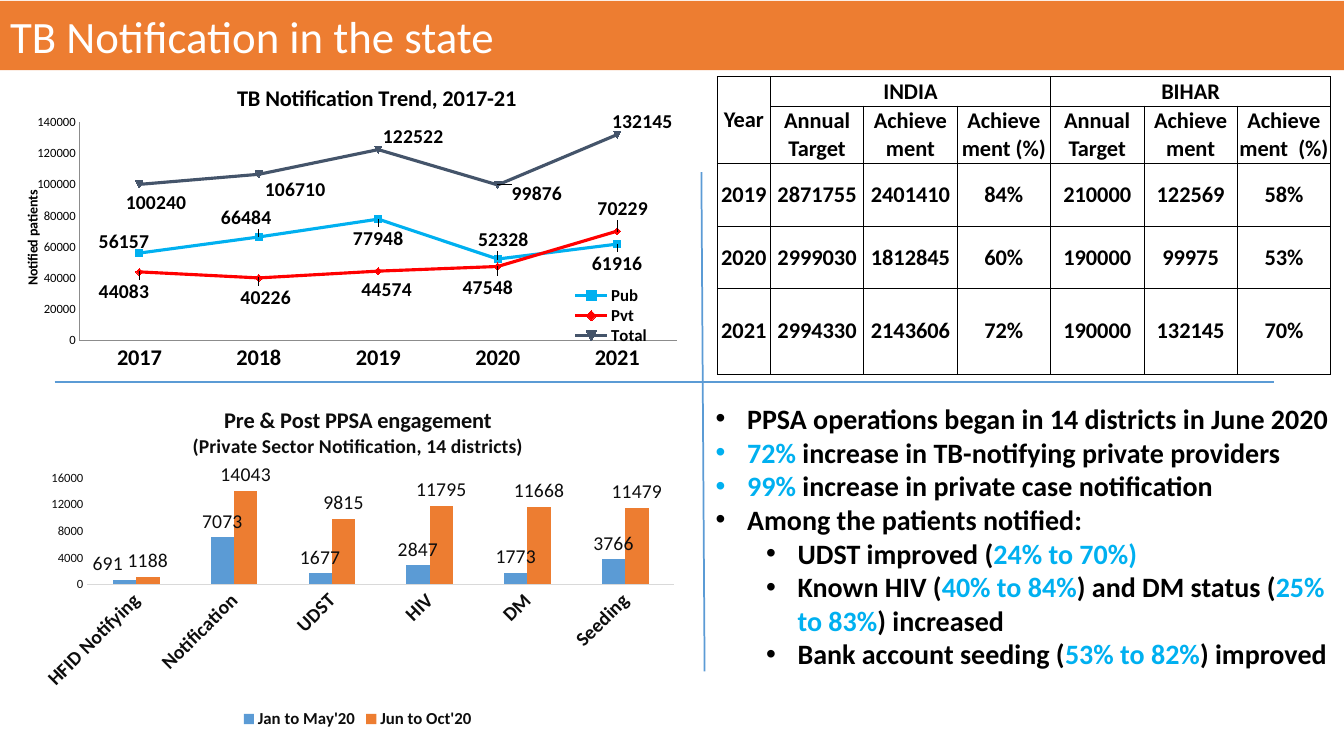
from lxml.etree import SubElement
from pptx import Presentation
from pptx.chart.data import CategoryChartData
from pptx.dml.color import RGBColor
from pptx.enum.chart import XL_CHART_TYPE, XL_LABEL_POSITION, XL_LEGEND_POSITION, XL_MARKER_STYLE, XL_TICK_MARK
from pptx.enum.shapes import MSO_CONNECTOR
from pptx.enum.text import MSO_ANCHOR, MSO_AUTO_SIZE, PP_ALIGN
from pptx.oxml import parse_xml
from pptx.oxml.ns import nsdecls, qn
from pptx.util import Pt

ORANGE = RGBColor(0xED, 0x7D, 0x31)
BLUE = RGBColor(0x5B, 0x9B, 0xD5)
CYAN = RGBColor(0x00, 0xB0, 0xF0)
RED = RGBColor(0xFF, 0x00, 0x00)
SLATE = RGBColor(0x44, 0x54, 0x6A)
BLACK = RGBColor(0x00, 0x00, 0x00)
INK = RGBColor(0x0D, 0x0D, 0x0D)
GREY = RGBColor(0x8C, 0x8C, 0x8C)
PALE = RGBColor(0xD9, 0xD9, 0xD9)
WHITE = RGBColor(0xFF, 0xFF, 0xFF)
FONT = "Calibri"

# Content
TITLE = "TB Notification in the state"
# (level, runs); every second run is highlighted
BULLETS = [
    (0, ["PPSA operations began in 14 districts in June 2020"]),
    (0, ["", "72% ", "increase in TB-notifying private providers"]),
    (0, ["", "99% ", "increase in private case notification"]),
    (0, ["Among the patients notified:"]),
    (1, ["UDST improved (", "24% to 70%)"]),
    (1, ["Known HIV (", "40% to 84%", ") and DM status (", "25% to 83%", ") increased"]),
    (1, ["Bank account seeding (", "53% to 82%", ") improved"]),
]
# \v breaks the line inside a cell
TABLE = [
    ["Year", "INDIA", "", "", "BIHAR", "", ""],
    ["", "Annual Target", "Achieve\vment", "Achieve\vment (%)",
     "Annual Target", "Achieve\vment", "Achieve\vment  (%)"],
    ["2019", "2871755", "2401410", "84%", "210000", "122569", "58%"],
    ["2020", "2999030", "1812845", "60%", "190000", "99975", "53%"],
    ["2021", "2994330", "2143606", "72%", "190000", "132145", "70%"],
]
MERGES = [((0, 0), (1, 0)), ((0, 1), (0, 3)), ((0, 4), (0, 6))]
COLUMN_WIDTHS = [38] + [66.7] * 6
ROW_HEIGHTS = [21, 41, 45, 44, 61.5]

# Series: name, colour, values, label shifts from each point (right, down)
TREND = {
    "box": (10, 50.4, 474, 226),
    "title": [("TB Notification Trend, 2017-21", 16)],
    "categories": ["2017", "2018", "2019", "2020", "2021"],
    "series": [
        ("Pub", CYAN, [56157, 66484, 77948, 52328, 61916],
         [(-11, -8), (-9, -14), (0, 14), (4, -14), (0, 14)]),
        ("Pvt", RED, [44083, 40226, 44574, 47548, 70229],
         [(-11, 14), (5, 14), (6, 13), (-7, 15), (4, -16)]),
        ("Total", SLATE, [100240, 106710, 122522, 99876, 132145],
         [(12, 13), (26, 11), (25, -9), (28, 6), (18, -9)]),
    ],
    "color": BLACK, "maximum": 140000, "step": 20000, "category_size": 16,
    "axis_line": (GREY, 0.5), "title_at": (0.33, 0.025),
    "plot_at": (0.099, 0.164, 0.9, 0.69),
}
ENGAGEMENT = {
    "box": (20, 278.6, 471, 245),
    "title": [("Pre & Post PPSA engagement", 16),
              ("(Private Sector Notification, 14 districts)", 14)],
    "categories": ["HFID Notifying", "Notification", "UDST", "HIV", "DM", "Seeding"],
    "series": [
        ("Jan to May'20", BLUE, [691, 7073, 1677, 2847, 1773, 3766], [(-12, 0)]),
        ("Jun to Oct'20", ORANGE, [1188, 14043, 9815, 11795, 11668, 11479], []),
    ],
    "color": INK, "maximum": 16000, "step": 4000, "category_size": 14,
    "axis_line": (PALE, 0.75), "title_at": (0.245, 0.035),
    "plot_at": (0.09, 0.257, 0.89, 0.31),
}
DIVIDERS = [((39, 273), (910, 273), 1.5), ((501, 123), (503.3, 479.5), 1.25)]
NO_LEADERS = (
    f'<c:extLst {nsdecls("c")}><c:ext uri="{{CE6537A1-D6FC-4f65-9D91-7224C49458BB}}" '
    'xmlns:c15="http://schemas.microsoft.com/office/drawing/2012/chart">'
    '<c15:showLeaderLines val="0"/></c:ext></c:extLst>')


def style_font(font, size, color, bold=True):
    font.name, font.size, font.bold = FONT, Pt(size), bold
    font.color.rgb = color


def place(shape, left, top, width, height):
    shape.left, shape.top = Pt(left), Pt(top)
    shape.width, shape.height = Pt(width), Pt(height)


def set_layout(element, index, values, mode="edge", inner=False):
    """Give a chart part its position as fractions of the chart."""
    for old in element.findall(qn("c:layout")):
        element.remove(old)
    layout = parse_xml(f"<c:layout {nsdecls('c')}><c:manualLayout/></c:layout>")
    manual = layout[0]
    if inner:
        SubElement(manual, qn("c:layoutTarget"), val="inner")
    for axis in "xy":
        SubElement(manual, qn(f"c:{axis}Mode"), val=mode)
    for name, value in zip("xywh", values):
        SubElement(manual, qn(f"c:{name}"), val=f"{value:.4f}")
    element.insert(index, layout)


def add_chart(slide, kind, content, label_position, labels_bold):
    data = CategoryChartData()
    data.categories = content["categories"]
    for name, _, values, _ in content["series"]:
        data.add_series(name, values)
    box, color = content["box"], content["color"]
    chart = slide.shapes.add_chart(kind, *map(Pt, box), data).chart
    style_font(chart.font, 10, color, False)

    # Title, legend and plot area
    title_frame = chart.chart_title.text_frame
    for number, (text, size) in enumerate(content["title"]):
        paragraph = title_frame.add_paragraph() if number else title_frame.paragraphs[0]
        run = paragraph.add_run()
        run.text = text
        style_font(run.font, size, color)
    set_layout(chart.element.xpath("c:chart/c:title")[0], 1, content["title_at"])
    set_layout(chart.element.xpath("c:chart/c:plotArea")[0], 0, content["plot_at"], inner=True)
    chart.has_legend = True
    chart.legend.position = XL_LEGEND_POSITION.BOTTOM
    chart.legend.include_in_layout = False
    style_font(chart.legend.font, 12, color)

    # Axes
    category_axis, value_axis = chart.category_axis, chart.value_axis
    for axis in (category_axis, value_axis):
        axis.major_tick_mark = axis.minor_tick_mark = XL_TICK_MARK.NONE
        axis.has_major_gridlines = False
        axis.format.line.color.rgb = content["axis_line"][0]
        axis.format.line.width = Pt(content["axis_line"][1])
    style_font(category_axis.tick_labels.font, content["category_size"], color)
    style_font(value_axis.tick_labels.font, 9, color, False)
    value_axis.minimum_scale, value_axis.maximum_scale = 0, content["maximum"]
    value_axis.major_unit = content["step"]

    # Data labels
    for series, (_, _, _, shifts) in zip(chart.plots[0].series, content["series"]):
        labels = series.data_labels
        labels.show_value = True
        labels.position = label_position
        style_font(labels.font, 14, color, labels_bold)
        for index, (right, down) in enumerate(shifts):
            label = series.points[index].data_label
            style_font(label.font, 14, color, labels_bold)
            label.position = label_position
            element = series._element.xpath(f"c:dLbls/c:dLbl[c:idx/@val='{index}']")[0]
            set_layout(element, 1, (right / box[2], down / box[3]), mode="factor")
        series._element.xpath("c:dLbls")[0].append(parse_xml(NO_LEADERS))
    return chart


presentation = Presentation()
presentation.slide_width, presentation.slide_height = Pt(960), Pt(540)
slide = presentation.slides.add_slide(presentation.slide_layouts[1])

# Title bar
title = slide.shapes.title
place(title, 0, 0.7, 960, 49.4)
title.fill.solid()
title.fill.fore_color.rgb = ORANGE
title.text_frame.text = TITLE
title.text_frame.vertical_anchor = MSO_ANCHOR.MIDDLE
title.text_frame.paragraphs[0].alignment = PP_ALIGN.LEFT
style_font(title.text_frame.paragraphs[0].font, 32, WHITE, False)

# Bullet list
body = slide.placeholders[1]
place(body, 504, 283.2, 453.6, 201)
body.text_frame.auto_size = MSO_AUTO_SIZE.NONE
for number, (level, runs) in enumerate(BULLETS):
    paragraph = body.text_frame.add_paragraph() if number else body.text_frame.paragraphs[0]
    paragraph.level, paragraph.space_before = level, Pt(0)
    style_font(paragraph.font, 20, BLACK)
    properties = paragraph._p.get_or_add_pPr()
    properties.set("marL", str(Pt(22.5 + 36 * level)))
    properties.set("indent", str(-Pt(22.5)))
    properties.insert_element_before(
        parse_xml(f'<a:buChar {nsdecls("a")} char="•"/>'), "a:tabLst", "a:defRPr")
    for position, text in enumerate(runs):
        if text:
            run = paragraph.add_run()
            run.text = text
            run.font.color.rgb = CYAN if position % 2 else BLACK

# Line chart
trend = add_chart(slide, XL_CHART_TYPE.LINE_MARKERS, TREND, XL_LABEL_POSITION.CENTER, True)
for series, (_, color, _, _) in zip(trend.plots[0].series, TREND["series"]):
    series.smooth = False
    series.format.line.color.rgb = color
    series.format.line.width = Pt(2.25)
    series.marker.style, series.marker.size = XL_MARKER_STYLE.AUTOMATIC, 5
    series.marker.format.fill.solid()
    series.marker.format.fill.fore_color.rgb = color
trend.legend.position = XL_LEGEND_POSITION.RIGHT
set_layout(trend.element.xpath("c:chart/c:legend")[0], 1, (0.835, 0.68, 0.13, 0.19))
axis_title = trend.value_axis.axis_title.text_frame
axis_title.text = "Notified patients"
style_font(axis_title.paragraphs[0].runs[0].font, 10, BLACK)
set_layout(trend.value_axis._element.xpath("c:title")[0], 1, (0.01, 0.37))

# Target and achievement table
table = slide.shapes.add_table(5, 7, Pt(512.3), Pt(54.7), Pt(sum(COLUMN_WIDTHS)), Pt(sum(ROW_HEIGHTS))).table
table.first_row = table.horz_banding = False
for column, width in zip(table.columns, COLUMN_WIDTHS):
    column.width = Pt(width)
for row, height, texts in zip(table.rows, ROW_HEIGHTS, TABLE):
    row.height = Pt(height)
    for cell, text in zip(row.cells, texts):
        cell.text = text
        cell.vertical_anchor = MSO_ANCHOR.MIDDLE
        cell.margin_left = cell.margin_right = cell.margin_top = Pt(0.5)
        cell.margin_bottom = 0
        paragraph = cell.text_frame.paragraphs[0]
        paragraph.alignment = PP_ALIGN.CENTER
        style_font(paragraph.font, 16, BLACK)
        properties = cell._tc.get_or_add_tcPr()
        for side in ("lnL", "lnR", "lnT", "lnB"):
            properties.append(parse_xml(
                f'<a:{side} {nsdecls("a")} w="{Pt(0.5)}"><a:solidFill>'
                f'<a:srgbClr val="{BLACK}"/></a:solidFill></a:{side}>'))
        cell.fill.background()
for first, last in MERGES:
    table.cell(*first).merge(table.cell(*last))

# Divider lines
for start, end, width in DIVIDERS:
    line = slide.shapes.add_connector(MSO_CONNECTOR.STRAIGHT, *map(Pt, start + end))
    line.line.color.rgb, line.line.width = BLUE, Pt(width)
    SubElement(line._element.spPr, qn("a:effectLst"))

# Column chart
columns = add_chart(slide, XL_CHART_TYPE.COLUMN_CLUSTERED, ENGAGEMENT, XL_LABEL_POSITION.OUTSIDE_END, False)
plot = columns.plots[0]
plot.gap_width, plot.overlap, plot.vary_by_categories = 219, 0, False
for series, (_, color, _, _) in zip(plot.series, ENGAGEMENT["series"]):
    series.format.fill.solid()
    series.format.fill.fore_color.rgb = color
columns.value_axis.format.line.fill.background()
columns.category_axis._element.xpath("c:txPr/a:bodyPr")[0].set("rot", "-2700000")

presentation.save("out.pptx")
